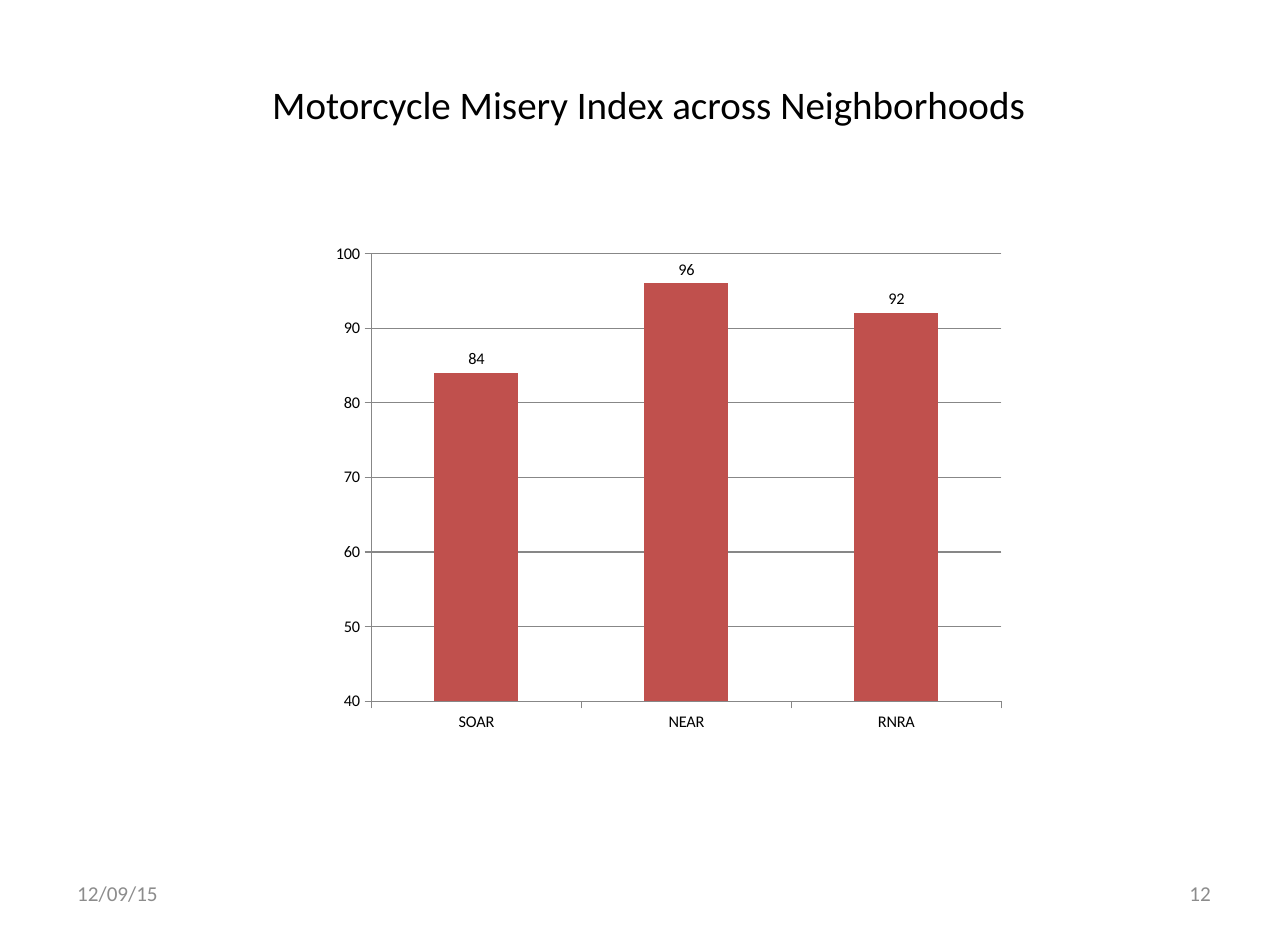
"""Build the Motorcycle Misery Index slide with its column chart."""
from pptx import Presentation
from pptx.chart.data import CategoryChartData
from pptx.dml.color import RGBColor
from pptx.enum.chart import XL_CHART_TYPE, XL_LABEL_POSITION, XL_TICK_MARK
from pptx.enum.text import MSO_ANCHOR, PP_ALIGN
from pptx.util import Emu, Pt

PX = 9144
FONT = "Calibri"
BLACK, GRAY, LINE, RED = "000000", "8C8C8C", "878787", "C0504D"
LEFT, CENTER, RIGHT = PP_ALIGN.LEFT, PP_ALIGN.CENTER, PP_ALIGN.RIGHT
MIDDLE = MSO_ANCHOR.MIDDLE
COLUMN = XL_CHART_TYPE.COLUMN_CLUSTERED
OUTSIDE, OUTSIDE_END = XL_TICK_MARK.OUTSIDE, XL_LABEL_POSITION.OUTSIDE_END


def px(*lengths):
    return [Emu(n * PX) for n in lengths]


def rgb(color):
    return RGBColor.from_string(color)


prs = Presentation()
prs.slide_width, prs.slide_height = px(1100, 800)
slide = prs.slides.add_slide(prs.slide_layouts[6])

texts = [
    ("Motorcycle Misery Index across Neighborhoods", (183, 53, 742, 72), 24, BLACK, CENTER),
    ("12/09/15", (55, 741, 257, 43), 13, GRAY, LEFT),
    ("12", (788, 741, 257, 43), 13, GRAY, RIGHT),
]
inset_x, inset_y = px(11, 5)
frame = {"word_wrap": True, "vertical_anchor": MIDDLE,
         "margin_left": inset_x, "margin_right": inset_x,
         "margin_top": inset_y, "margin_bottom": inset_y}
for text, box, size, color, align in texts:
    tf = slide.shapes.add_textbox(*px(*box)).text_frame
    for name, value in frame.items():
        setattr(tf, name, value)
    p = tf.paragraphs[0]
    p.alignment = align
    r = p.add_run()
    r.text = text
    r.font.name, r.font.size = FONT, Pt(size)
    r.font.color.rgb = rgb(color)

data = CategoryChartData()
data.categories = ["SOAR", "NEAR", "RNRA"]
data.add_series("Series 1", [84, 96, 92])
chart = slide.shapes.add_chart(COLUMN, *px(275, 200, 592, 433), data).chart
chart.has_legend = chart.has_title = False
chart.font.name, chart.font.size = FONT, Pt(10)
chart.font.color.rgb = rgb(BLACK)

plot = chart.plots[0]
plot.gap_width = 150
plot.vary_by_categories = False
series = plot.series[0]
series.invert_if_negative = False
series.format.fill.solid()
series.format.fill.fore_color.rgb = rgb(RED)
labels = series.data_labels
labels.show_value, labels.position = True, OUTSIDE_END

cat_axis, val_axis = chart.category_axis, chart.value_axis
scale = {"minimum_scale": 40, "maximum_scale": 100, "major_unit": 10,
         "has_major_gridlines": True}
for name, value in scale.items():
    setattr(val_axis, name, value)
for axis in (cat_axis, val_axis):
    axis.major_tick_mark = OUTSIDE
for part in (cat_axis, val_axis, val_axis.major_gridlines):
    part.format.line.width = Pt(0.75)
    part.format.line.color.rgb = rgb(LINE)

prs.save("out.pptx")
